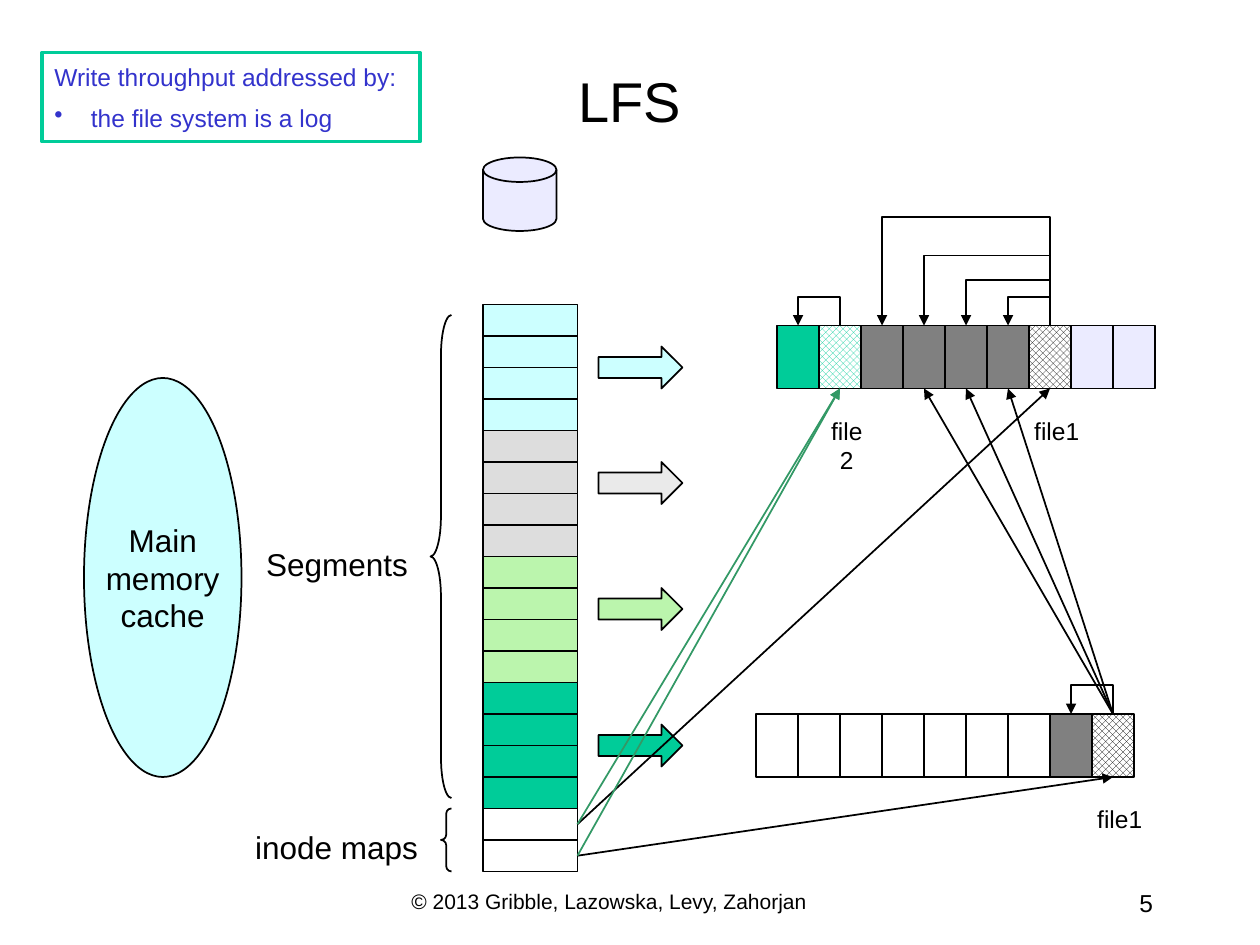
from lxml.etree import SubElement
from pptx import Presentation
from pptx.dml.color import RGBColor
from pptx.enum.dml import MSO_PATTERN
from pptx.enum.shapes import MSO_CONNECTOR as LINE, MSO_SHAPE as SHAPE
from pptx.enum.text import MSO_ANCHOR, PP_ALIGN
from pptx.oxml.ns import qn
from pptx.util import Emu, Inches, Pt

THEME = {
    "font": "Arial",
    "size": {"title": 32, "large": 18, "small": 14, "foot": 12},
    "width": {"thin": 1, "thick": 2},
    "color": {
        "black": "000000", "white": "FFFFFF", "blue": "3333CC",
        "cyan": "CCFFFF", "gray": "DDDDDD", "pale": "EAEAEA",
        "lime": "BBF5AD", "teal": "00CC99", "dark": "808080",
        "lilac": "EBEBFF", "green": "339966",
    },
}

# Every place is counted in twelfths of an inch.
TITLE = ("LFS", (9, 5, 102, 9))
NOTE = ("Write throughput addressed by:", "the file system is a log")
NOTE_BOX = (4, 5, 36, 8.5)
CACHE = ("Main\nmemory\ncache", (8, 36, 15, 38))
DISK = (46, 15, 7, 7)
BRACES = [((41, 30, 2, 46), 1.917), ((42, 77, 1, 6), 0.5)]

STACK = {"left": 46, "top": 29, "wide": 9, "high": 3}
SEGMENTS = ["cyan"] * 4 + ["gray"] * 4 + ["lime"] * 4 + ["teal"] * 4 + [None] * 2
ARROWS = [(33, "cyan"), (44, "pale"), (56, "lime"), (69, "teal")]

CELL = {"wide": 4, "high": 6}
# A leading "/" marks a checked cell.
LOGS = {
    "upper": (74, 31, ["teal", "/teal"] + ["dark"] * 4 + ["/black"] + ["lilac"] * 2),
    "lower": (72, 68, [None] * 7 + ["dark", "/black"]),
}
# log, from cell, to cell, rise
BENDS = [
    ("upper", 6, 5, 3), ("upper", 6, 4, 4.75), ("upper", 6, 3, 7.35),
    ("upper", 6, 2, 11.35), ("upper", 1, 0, 3), ("lower", 8, 7, 3),
]
OLD_BLOCKS = [5, 4, 3]
# segment, log, cell, color
MAPS = [
    (16, "upper", 6, "black"), (16, "upper", 1, "green"),
    (17, "lower", 8, "black"), (17, "upper", 1, "green"),
]
# text, box, size, align, wrap
LABELS = [
    ("© 2013 Gribble, Lazowska, Levy, Zahorjan", (38, 84, 44, 4), "foot", "LEFT", True),
    ("5", (86, 84, 25, 4), "small", "RIGHT", True),
    ("file 2", (77, 39, 7.3, 4), "small", "CENTER", False),
    ("file1", (97.3, 39, 6.7, 4), "small", "CENTER", False),
    ("file1", (103.3, 76, 6.7, 4), "small", "CENTER", False),
    ("Segments", (24.1, 51.3, 16, 4.8), "large", "CENTER", False),
    ("inode maps", (23.1, 78.25, 17.9, 4.8), "large", "CENTER", False),
]


def unit(n):
    return Inches(n / 12)


def place(box):
    return [unit(n) for n in box]


def tint(name):
    return RGBColor.from_string(THEME["color"][name])


def write(par, text, size, color="black", align="LEFT"):
    par.text = text
    par.alignment = PP_ALIGN[align]
    par.font.name = THEME["font"]
    par.font.size = Pt(THEME["size"][size])
    par.font.color.rgb = tint(color)


def draw(kind, box, fill=None, line="black", width="thin"):
    shape = slide.shapes.add_shape(kind, *place(box))
    shape.shadow.inherit = False
    if fill is None:
        shape.fill.background()
    elif fill.startswith("/"):
        shape.fill.patterned()
        shape.fill.pattern = MSO_PATTERN.LARGE_CHECKER_BOARD
        shape.fill.fore_color.rgb = tint(fill[1:])
        shape.fill.back_color.rgb = tint("white")
    else:
        shape.fill.solid()
        shape.fill.fore_color.rgb = tint(fill)
    shape.line.color.rgb = tint(line)
    shape.line.width = Pt(THEME["width"][width])
    return shape


def link(kind, start, end, color="black"):
    """Add a line with an arrowhead at its end."""
    line = slide.shapes.add_connector(kind, *start, *end)
    line.line.color.rgb = tint(color)
    line.line.width = Pt(THEME["width"]["thin"])
    props = line.element.spPr
    SubElement(props.find(qn("a:ln")), qn("a:tailEnd"), type="triangle")
    SubElement(props, qn("a:effectLst"))
    return line


def bend(x1, x2, y, rise):
    """Link two points at one height by an elbow that rises above them."""
    thin, span = Emu(1588), unit(x1 - x2)
    left, top = unit((x1 + x2) / 2), unit(y) - span // 2
    line = link(LINE.ELBOW, (left + thin, top + span), (left, top))
    props = line.element.spPr
    props.find(qn("a:xfrm")).set("rot", "16200000")
    geom = props.find(qn("a:prstGeom"))
    guides = geom.find(qn("a:avLst"))
    if guides is None:
        guides = SubElement(geom, qn("a:avLst"))
    ratio = -round(unit(rise) / thin * 100000)
    SubElement(guides, qn("a:gd"), name="adj1", fmla=f"val {ratio}")


def spot(log, cell, low=False):
    """Give the middle of a cell's top or bottom edge."""
    left, top, _ = LOGS[log]
    return left + CELL["wide"] * (cell + 0.5), top + CELL["high"] * low


deck = Presentation()
deck.slide_width, deck.slide_height = Inches(10), Inches(7.5)
slide = deck.slides.add_slide(deck.slide_layouts[5])

title = slide.shapes.title
title.left, title.top, title.width, title.height = place(TITLE[1])
title.text_frame.vertical_anchor = MSO_ANCHOR.MIDDLE
write(title.text_frame.paragraphs[0], TITLE[0], "title", align="CENTER")

for top, fill in ARROWS:
    draw(SHAPE.RIGHT_ARROW, (57, top, 8, 4), fill)
draw(SHAPE.FLOWCHART_MAGNETIC_DISK, DISK, "lilac")

for row, fill in enumerate(SEGMENTS):
    top = STACK["top"] + row * STACK["high"]
    draw(SHAPE.RECTANGLE, (STACK["left"], top, STACK["wide"], STACK["high"]), fill)

for left, top, fills in LOGS.values():
    for col, fill in enumerate(fills):
        box = (left + col * CELL["wide"], top, CELL["wide"], CELL["high"])
        draw(SHAPE.RECTANGLE, box, fill)

for box, curve in BRACES:
    draw(SHAPE.LEFT_BRACE, box).adjustments[0] = curve

for text, box, size, align, wrap in LABELS:
    frame = slide.shapes.add_textbox(*place(box)).text_frame
    frame.word_wrap = wrap
    write(frame.paragraphs[0], text, size, align=align)

for log, first, last, rise in BENDS:
    x, y = spot(log, first)
    bend(x, spot(log, last)[0], y, rise)
for cell in OLD_BLOCKS:
    link(LINE.STRAIGHT, place(spot("lower", 8)), place(spot("upper", cell, True)))
for row, log, cell, color in MAPS:
    start = (STACK["left"] + STACK["wide"], STACK["top"] + (row + 0.5) * STACK["high"])
    link(LINE.STRAIGHT, place(start), place(spot(log, cell, True)), color)

frame = draw(SHAPE.OVAL, CACHE[1], "cyan").text_frame
frame.word_wrap = False
frame.vertical_anchor = MSO_ANCHOR.MIDDLE
write(frame.paragraphs[0], CACHE[0], "large", align="CENTER")

frame = draw(SHAPE.RECTANGLE, NOTE_BOX, line="teal", width="thick").text_frame
frame.word_wrap = True
frame.vertical_anchor = MSO_ANCHOR.MIDDLE
write(frame.paragraphs[0], NOTE[0], "small", "blue")
item = frame.add_paragraph()
write(item, NOTE[1], "small", "blue")
item.space_before = Pt(7)
props = item._p.get_or_add_pPr()
props.set("marL", str(Inches(0.29)))
props.set("indent", str(-Inches(0.29)))
SubElement(props, qn("a:buChar"), char="•")
# Bullets must come before the default run settings.
props.append(props.find(qn("a:defRPr")))

deck.save("out.pptx")
